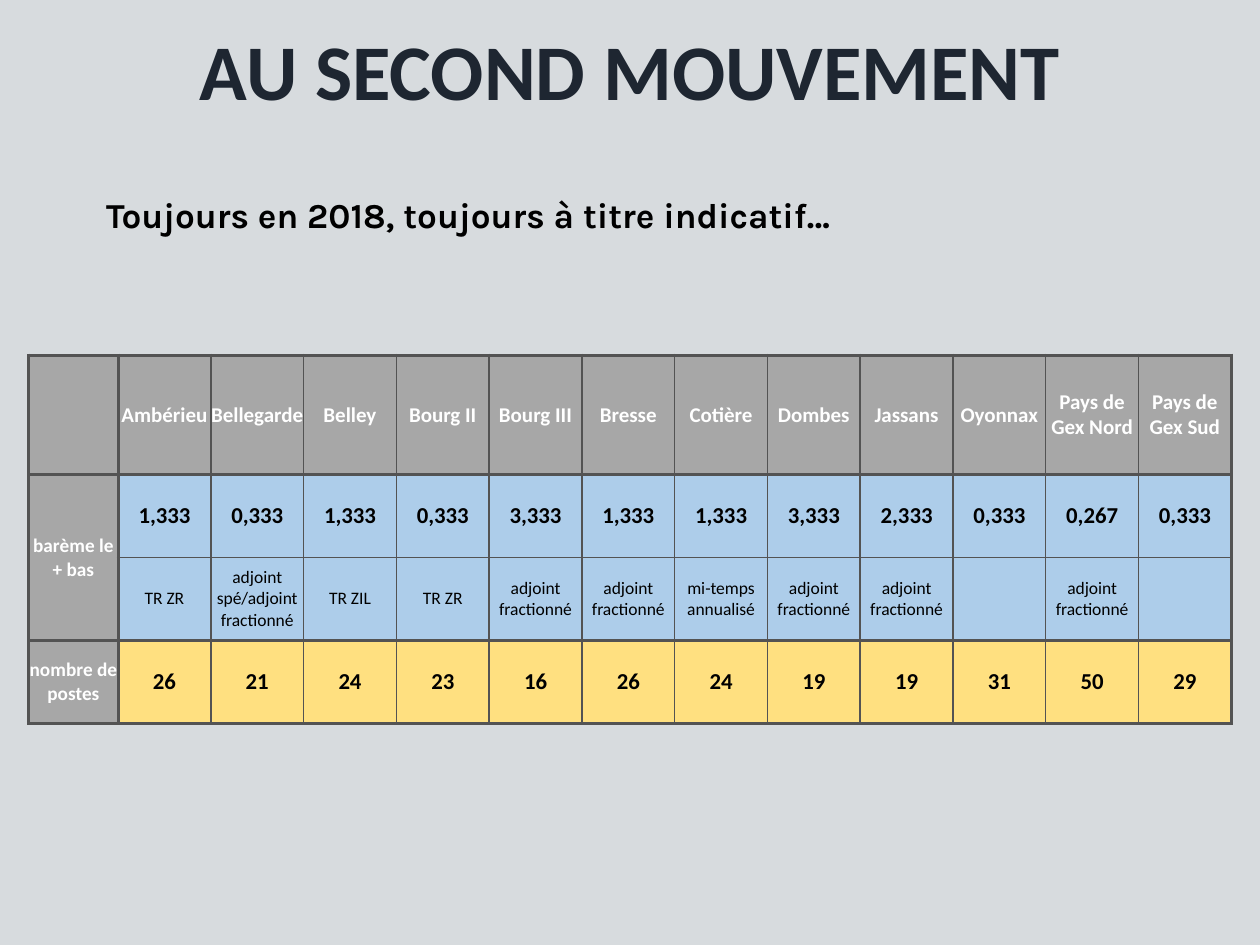
from lxml.etree import SubElement
from pptx import Presentation
from pptx.dml.color import RGBColor
from pptx.enum.text import MSO_ANCHOR as Anchor, MSO_AUTO_SIZE as AutoSize, PP_ALIGN as Align
from pptx.oxml.ns import qn
from pptx.util import Cm, Pt

BACKGROUND = RGBColor(0xD7, 0xDB, 0xDE)
NAVY = RGBColor(0x1E, 0x26, 0x31)
BLACK = RGBColor(0x00, 0x00, 0x00)
WHITE = RGBColor(0xFF, 0xFF, 0xFF)
GREY = RGBColor(0xA7, 0xA7, 0xA7)
BLUE = RGBColor(0xAD, 0xCD, 0xEA)
YELLOW = RGBColor(0xFF, 0xE0, 0x80)
RULE = RGBColor(0x53, 0x53, 0x53)

THIN, THICK = 1, 2
LABEL_WIDTH, SECTOR_WIDTH = 1.8, 1.87
HEADER_HEIGHT, ROW_HEIGHT = 2.41, 1.67

SECTORS = ["Ambérieu", "Bellegarde", "Belley", "Bourg II", "Bourg III", "Bresse", "Cotière",
           "Dombes", "Jassans", "Oyonnax", "Pays de Gex Nord", "Pays de Gex Sud"]
LOWEST_SCORES = ["1,333", "0,333", "1,333", "0,333", "3,333", "1,333", "1,333",
                 "3,333", "2,333", "0,333", "0,267", "0,333"]
FRACTIONAL = "adjoint fractionné"
POST_TYPES = ["TR ZR", "adjoint spé/adjoint fractionné", "TR ZIL", "TR ZR", FRACTIONAL, FRACTIONAL,
              "mi-temps annualisé", FRACTIONAL, FRACTIONAL, "", FRACTIONAL, ""]
POST_COUNTS = ["26", "21", "24", "23", "16", "26", "24", "19", "19", "31", "50", "29"]

LABEL_STYLE = (GREY, WHITE, {"size": Pt(11), "bold": True})
ROWS = [
    ("", SECTORS, (GREY, WHITE, {"size": Pt(12), "bold": True})),
    ("barème le + bas", LOWEST_SCORES, (BLUE, BLACK, {"size": Pt(13), "bold": True})),
    ("", POST_TYPES, (BLUE, BLACK, {"size": Pt(10), "bold": False})),
    ("nombre de postes", POST_COUNTS, (YELLOW, BLACK, {"size": Pt(13), "bold": True})),
]


def apply_format(target, values):
    """Set every attribute in values on the target."""
    for attribute, value in values.items():
        setattr(target, attribute, value)


def write(paragraph, text, color, font_values):
    """Put one formatted run into a paragraph."""
    run = paragraph.add_run()
    run.text = text
    apply_format(run.font, font_values)
    run.font.color.rgb = color


def add_heading(slide, box, text, color, font_values, frame_values, paragraph_values):
    """Add a line of text in the given box."""
    heading = slide.shapes.add_textbox(*map(Cm, box))
    frame = heading.text_frame
    margins = dict.fromkeys(("margin_left", "margin_top", "margin_right", "margin_bottom"), Cm(0.13))
    apply_format(frame, {"word_wrap": True, **margins, **frame_values})
    apply_format(frame.paragraphs[0], paragraph_values)
    write(frame.paragraphs[0], text, color, font_values)


def set_borders(cell, widths):
    """Draw the left, right, top and bottom rules of a cell."""
    properties = cell._tc.get_or_add_tcPr()
    for side, width in zip(("lnL", "lnR", "lnT", "lnB"), widths):
        line = SubElement(properties, qn(f"a:{side}"), w=str(Pt(width)))
        fill = SubElement(line, qn("a:solidFill"))
        SubElement(fill, qn("a:srgbClr"), val=str(RULE))


def fill_cell(cell, text, style, widths):
    """Format one cell and write its text."""
    background, color, font_values = style
    margins = dict.fromkeys(("margin_left", "margin_top", "margin_right", "margin_bottom"), 0)
    apply_format(cell, {"vertical_anchor": Anchor.MIDDLE, **margins})
    set_borders(cell, widths)
    cell.fill.solid()
    cell.fill.fore_color.rgb = background
    if text:
        paragraph = cell.text_frame.paragraphs[0]
        paragraph.alignment = Align.CENTER
        write(paragraph, text, color, font_values)


def add_score_table(slide, box):
    """Add the table of scores and posts by sector in the given box."""
    column_count = len(SECTORS) + 1
    table = slide.shapes.add_table(len(ROWS), column_count, *map(Cm, box)).table
    apply_format(table, {"first_row": False, "horz_banding": False})
    for index, column in enumerate(table.columns):
        column.width = Cm(SECTOR_WIDTH if index else LABEL_WIDTH)
    for index, row in enumerate(table.rows):
        row.height = Cm(ROW_HEIGHT if index else HEADER_HEIGHT)

    column_rules = [THICK, THICK] + [THIN] * (column_count - 2) + [THICK]
    row_rules = [THICK, THICK, THIN, THICK, THICK]
    for r, (label, values, style) in enumerate(ROWS):
        for c, text in enumerate([label, *values]):
            widths = (*column_rules[c:c + 2], *row_rules[r:r + 2])
            fill_cell(table.cell(r, c), text, style if c else LABEL_STYLE, widths)
    table.cell(1, 0).merge(table.cell(2, 0))


def main():
    """Build the slide and save it."""
    deck = Presentation()
    apply_format(deck, {"slide_width": Cm(25.4), "slide_height": Cm(19.05)})
    slide = deck.slides.add_slide(deck.slide_layouts[6])
    slide.background.fill.solid()
    slide.background.fill.fore_color.rgb = BACKGROUND

    add_heading(slide, (1.6, 0.41, 22.2, 2.08), "AU SECOND MOUVEMENT", NAVY,
                {"name": "Calibri", "size": Pt(45), "bold": True},
                {"vertical_anchor": Anchor.BOTTOM},
                {"alignment": Align.CENTER, "line_spacing": 0.9})
    add_heading(slide, (2.01, 3.78, 21.36, 1.07), "Toujours en 2018, toujours à titre indicatif…", BLACK,
                {"name": "Karla", "size": Pt(20), "bold": True},
                {"auto_size": AutoSize.SHAPE_TO_FIT_TEXT}, {})
    table_width = LABEL_WIDTH + SECTOR_WIDTH * len(SECTORS)
    table_height = HEADER_HEIGHT + ROW_HEIGHT * (len(ROWS) - 1)
    add_score_table(slide, (0.58, 7.16, table_width, table_height))
    deck.save("out.pptx")


if __name__ == "__main__":
    for style in [LABEL_STYLE, *(row[2] for row in ROWS)]:
        style[2]["name"] = "Calibri"
    main()
